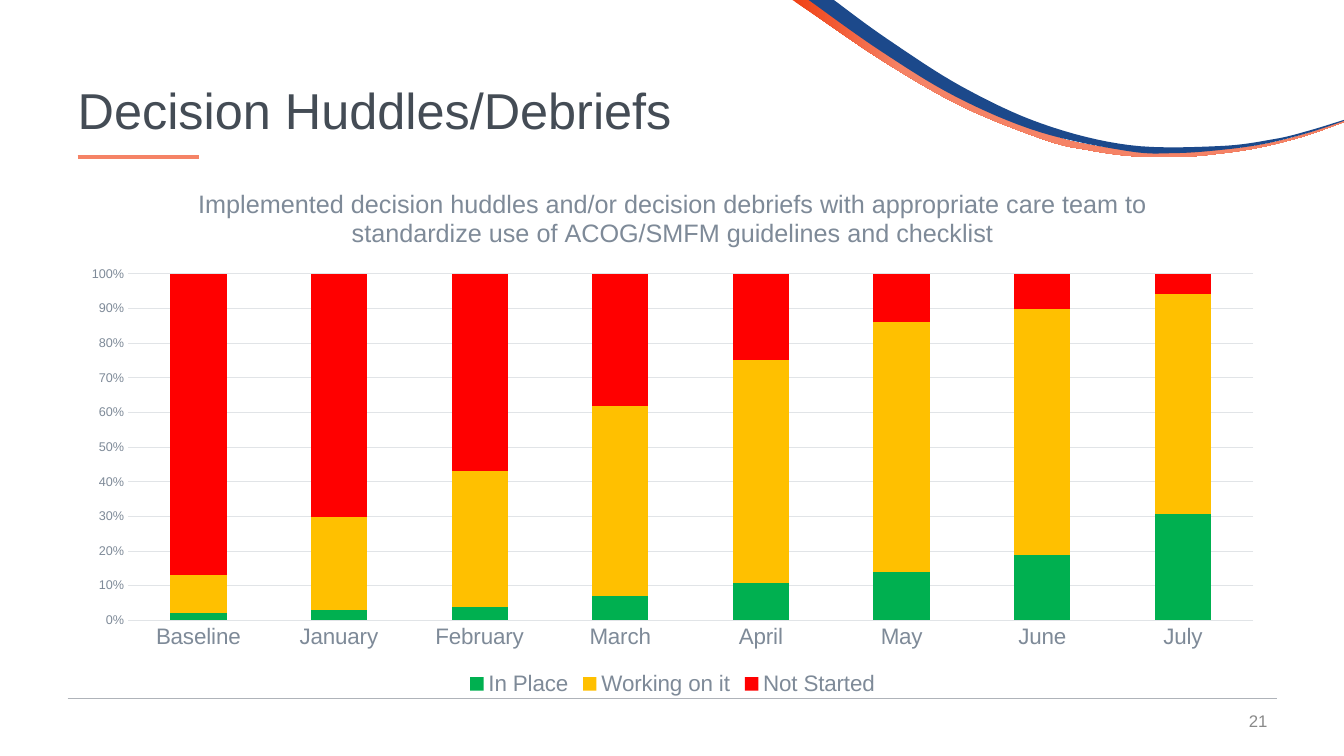
from pptx import Presentation
from pptx.chart.data import CategoryChartData as Data
from pptx.dml.color import RGBColor
from pptx.enum.chart import XL_CHART_TYPE as Kind, XL_LEGEND_POSITION as Spot, XL_TICK_MARK as Tick
from pptx.enum.shapes import MSO_CONNECTOR as Link
from pptx.enum.text import MSO_ANCHOR as Anchor, MSO_AUTO_SIZE as Fit, PP_ALIGN as Align
from pptx.oxml import parse_xml
from pptx.oxml.ns import nsdecls
from pptx.util import Inches, Pt

GREY, PALE, CORAL = "7E8A98", "E1E4E7", "F58366"


def tint(color, code):
    color.rgb = RGBColor.from_string(code)


def put(item, **vals):
    for name, val in vals.items():
        setattr(item, name, val)


def smooth(knots, steps=8):
    """Points of a Catmull-Rom curve through the knots."""
    ends = [knots[0], *knots, knots[-1]]
    curve = [knots[0]]
    for a, b, c, d in zip(ends, ends[1:], ends[2:], ends[3:]):
        for n in range(1, steps + 1):
            t = n / steps
            curve.append(tuple(
                (2 * q + (r - p) * t + (2 * p - 5 * q + 4 * r - s) * t ** 2
                 + (3 * q - p - 3 * r + s) * t ** 3) / 2
                for p, q, r, s in zip(a, b, c, d)))
    return curve


class Page:
    face = "Arial"

    def __init__(self, deck):
        self.slide = deck.slides.add_slide(deck.slide_layouts[5])
        self.shapes = self.slide.shapes

    def font(self, font, size, code):
        put(font, name=self.face, size=Pt(size), bold=False)
        tint(font.color, code)

    def place(self, shape, box):
        names = ("left", "top", "width", "height")
        put(shape, **dict(zip(names, map(Inches, box))))

    def words(self, shape, text, size, code, **form):
        frame = shape.text_frame
        put(frame, word_wrap=True, auto_size=Fit.NONE, vertical_anchor=Anchor.MIDDLE)
        para = frame.paragraphs[0]
        para.text = text
        put(para, **form)
        self.font(para.runs[0].font, size, code)

    def title(self, text, box):
        self.place(self.shapes.title, box)
        self.words(self.shapes.title, text, 36, "444C55",
                   alignment=Align.LEFT, line_spacing=0.9)

    def label(self, text, box):
        shape = self.shapes.add_textbox(*map(Inches, box))
        self.words(shape, text, 12, "898989", alignment=Align.RIGHT)

    def rule(self, left, right, top, code, width):
        line = self.shapes.add_connector(Link.STRAIGHT, *map(Inches, (left, top, right, top)))
        line.line.width = Pt(width)
        tint(line.line.color, code)
        line._element.spPr.append(parse_xml(f"<a:effectLst {nsdecls('a')}/>"))

    def wave(self, upper, lower, codes):
        first, *rest = smooth(upper) + smooth(lower)
        edge = self.shapes.build_freeform(*map(Inches, first), scale=1.0)
        edge.add_line_segments([tuple(map(Inches, spot)) for spot in rest])
        shape = edge.convert_to_shape()
        shape.shadow.inherit = False
        shape.line.fill.background()
        fill = shape.fill
        if len(codes) == 1:
            fill.solid()
            tint(fill.fore_color, codes[0])
            return
        fill.gradient()
        fill.gradient_angle = 0
        for stop, code, spot in zip(fill.gradient_stops, codes, (0, 0.2)):
            stop.position = spot
            tint(stop.color, code)

    def chart(self, head, cats, rows, box, plot_box):
        data = Data(number_format="0")
        data.categories = cats
        for name, code, vals in rows:
            data.add_series(name, vals)
        chart = self.shapes.add_chart(
            Kind.COLUMN_STACKED_100, *map(Inches, box), data).chart
        self.font(chart.font, 10, "444C55")

        # Heading and legend
        chart.has_title = True
        para = chart.chart_title.text_frame.paragraphs[0]
        para.text = head
        self.font(para.runs[0].font, 18, GREY)
        chart.has_legend = True
        put(chart.legend, position=Spot.BOTTOM, include_in_layout=False)
        self.font(chart.legend.font, 16, GREY)

        # Columns
        plot = chart.plots[0]
        put(plot, gap_width=150, overlap=100, vary_by_categories=False)
        for part, (name, code, vals) in zip(plot.series, rows):
            part.format.fill.solid()
            tint(part.format.fill.fore_color, code)

        # Axes
        base, side = chart.category_axis, chart.value_axis
        for axis, size in ((base, 16), (side, 9)):
            put(axis, major_tick_mark=Tick.NONE, minor_tick_mark=Tick.NONE)
            self.font(axis.tick_labels.font, size, GREY)
        put(side, minimum_scale=0, maximum_scale=1, major_unit=0.1, has_major_gridlines=True)
        put(side.tick_labels, number_format="0%", number_format_is_linked=False)
        side.format.line.fill.background()
        for line in (base.format.line, side.major_gridlines.format.line):
            line.width = Pt(0.75)
            tint(line.color, PALE)

        # Plot position inside the chart
        spots = "".join(f'<c:{key} val="{val}"/>' for key, val in plot_box.items())
        area = chart._chartSpace.chart.plotArea
        for old in area.findall(area.tag.replace("plotArea", "layout")):
            area.remove(old)
        area.insert(0, parse_xml(
            f'<c:layout {nsdecls("c")}><c:manualLayout><c:layoutTarget val="inner"/>'
            f'<c:xMode val="edge"/><c:yMode val="edge"/>{spots}'
            '</c:manualLayout></c:layout>'))


def main():
    deck = Presentation()
    put(deck, slide_width=Inches(13.33), slide_height=Inches(7.5))
    page = Page(deck)

    # Corner waves
    page.wave(
        [(8.05, 0), (8.82, 0.54), (9.58, 0.99), (10.39, 1.33), (10.81, 1.44), (11.25, 1.5),
         (11.68, 1.52), (12.12, 1.49), (12.56, 1.43), (12.99, 1.32), (13.33, 1.2)],
        [(13.33, 1.21), (12.94, 1.35), (12.51, 1.46), (12.13, 1.52), (11.69, 1.56),
         (11.24, 1.55), (10.8, 1.49), (10.37, 1.39), (9.55, 1.06), (8.78, 0.62),
         (8.04, 0.12), (7.86, 0)],
        ("F04115", CORAL))
    page.wave(
        [(8.27, 0), (8.79, 0.38), (9.54, 0.86), (10.34, 1.23), (11.2, 1.44), (12.09, 1.45),
         (12.64, 1.38), (12.97, 1.3), (13.33, 1.19)],
        [(13.33, 1.2), (12.97, 1.32), (12.53, 1.43), (12.09, 1.49), (11.64, 1.52),
         (11.19, 1.5), (10.31, 1.31), (9.48, 0.96), (8.71, 0.49), (8.02, 0)],
        ("1C498B",))

    # Rules, title and page number
    page.rule(0.67, 12.67, 6.93, "AFB3B9", 0.5)
    page.rule(0.77, 1.97, 1.56, CORAL, 2.5)
    page.title("Decision Huddles/Debriefs", (0.67, 0.4, 12, 1.45))
    page.label("21", (9.67, 6.95, 3, 0.4))

    # Monthly progress
    page.chart(
        "Implemented decision huddles and/or decision debriefs with appropriate care team "
        "to standardize use of ACOG/SMFM guidelines and checklist",
        ("Baseline", "January", "February", "March", "April", "May", "June", "July"),
        (("In Place", "00B050", (2, 3, 4, 7, 11, 14, 19, 31)),
         ("Working on it", "FFC000", (11, 27, 39, 55, 65, 72, 71, 64)),
         ("Not Started", "FF0000", (87, 71, 57, 38, 25, 14, 10, 6))),
        (0.67, 1.66, 12, 5.29),
        {"x": 0.05, "y": 0.2, "w": 0.93, "h": 0.65})

    deck.save("out.pptx")


if __name__ == "__main__":
    main()
